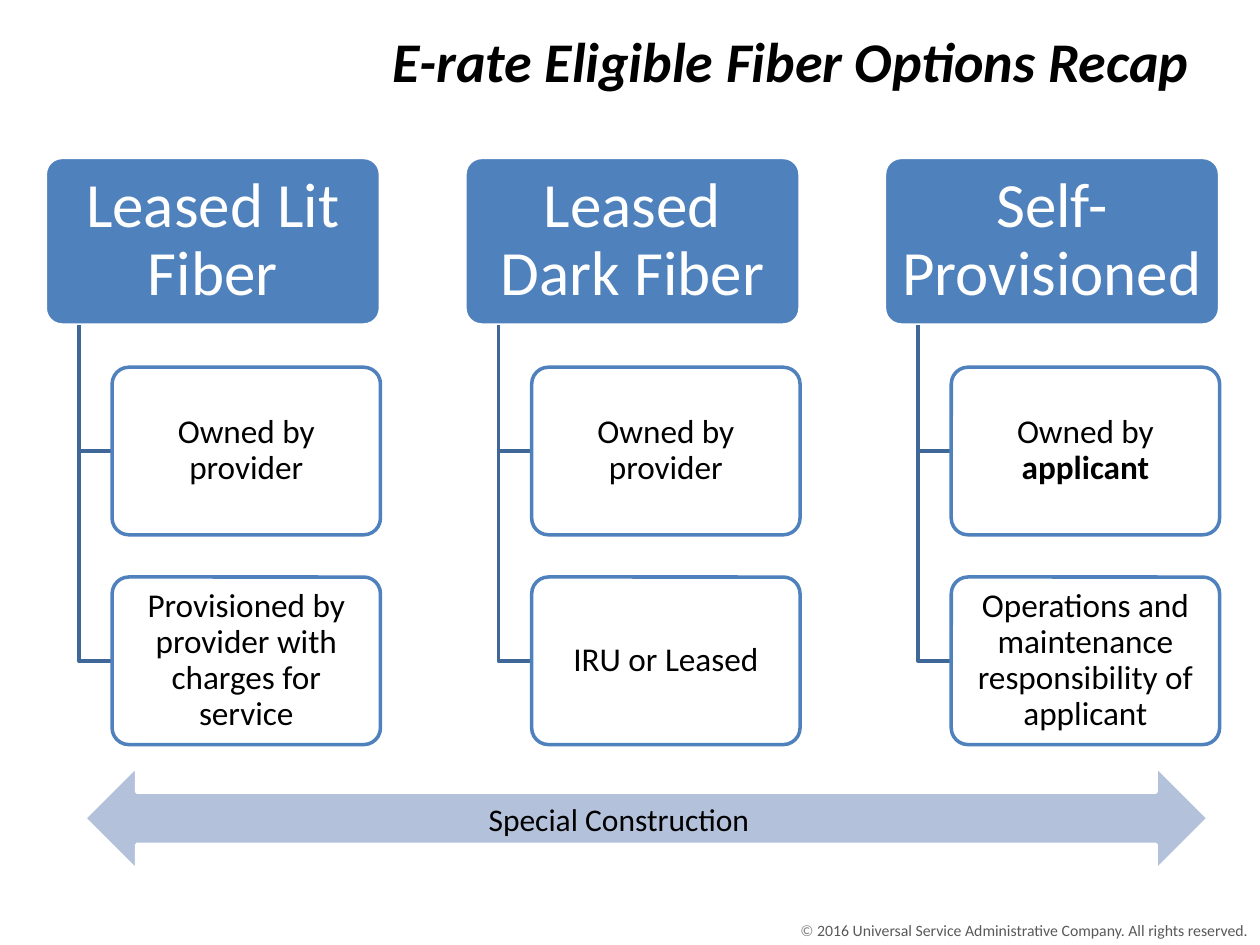
from dataclasses import dataclass

from lxml import etree
from pptx import Presentation
from pptx.dml.color import RGBColor
from pptx.enum.shapes import MSO_SHAPE
from pptx.enum.text import MSO_ANCHOR, PP_ALIGN
from pptx.oxml.ns import qn
from pptx.util import Inches, Pt

ROUNDED = MSO_SHAPE.ROUNDED_RECTANGLE
ARROW = MSO_SHAPE.LEFT_RIGHT_ARROW
MIDDLE = MSO_ANCHOR.MIDDLE
LEFT, CENTER, RIGHT = PP_ALIGN.LEFT, PP_ALIGN.CENTER, PP_ALIGN.RIGHT

FONT = "Calibri"
BLACK = RGBColor(0x00, 0x00, 0x00)
WHITE = RGBColor(0xFF, 0xFF, 0xFF)
BLUE = RGBColor(0x4F, 0x81, 0xBD)
DARK_BLUE = RGBColor(0x3F, 0x67, 0x97)
PALE_BLUE = RGBColor(0xB3, 0xC1, 0xDB)
GREY = RGBColor(0x80, 0x80, 0x80)
DARK_GREY = RGBColor(0x59, 0x59, 0x59)

FIRST_LEFT, COLUMN_STEP = 0.36, 3.33
HEAD_TOP, HEAD_WIDTH, BOX_HEIGHT = 1.25, 2.66, 1.33
ROW_STEP = 1.665
INDENT, TRUNK = 0.53, 0.265
LINE_WIDTH = Pt(2)


@dataclass(frozen=True)
class Run:
    text: str
    size: float
    color: RGBColor = BLACK
    bold: bool = False
    italic: bool = False


@dataclass(frozen=True)
class Option:
    heading: str
    details: tuple[tuple[Run, ...], ...]


def detail(text: str, bold: bool = False) -> Run:
    return Run(text, 19, bold=bold)


OPTIONS = (
    Option("Leased Lit Fiber", (
        (detail("Owned by provider"),),
        (detail("Provisioned by provider with charges for service"),),
    )),
    Option("Leased Dark Fiber", (
        (detail("Owned by provider"),),
        (detail("IRU or Leased"),),
    )),
    Option("Self-Provisioned", (
        (detail("Owned by "), detail("applicant", bold=True)),
        (detail("Operations and maintenance responsibility of applicant"),),
    )),
)


def write(tf, runs: tuple[Run, ...], align, insets: tuple[float, float]) -> None:
    """Fill a text frame with one paragraph; insets are horizontal, vertical."""
    tf.word_wrap = True
    tf.margin_left = tf.margin_right = Inches(insets[0])
    tf.margin_top = tf.margin_bottom = Inches(insets[1])
    p = tf.paragraphs[0]
    p.alignment = align
    for run in runs:
        r = p.add_run()
        r.text = run.text
        r.font.name = FONT
        r.font.size = Pt(run.size)
        r.font.color.rgb = run.color
        r.font.bold = run.bold
        r.font.italic = run.italic


def add_text(slide, left: float, top: float, width: float, height: float,
             runs: tuple[Run, ...], align=LEFT,
             insets: tuple[float, float] = (0.1, 0.05)) -> None:
    box = slide.shapes.add_textbox(
        Inches(left), Inches(top), Inches(width), Inches(height))
    write(box.text_frame, runs, align, insets)


def add_filled(slide, kind, left: float, top: float, width: float,
               height: float, fill: RGBColor, line: RGBColor):
    sp = slide.shapes.add_shape(
        kind, Inches(left), Inches(top), Inches(width), Inches(height))
    sp.shadow.inherit = False
    sp.fill.solid()
    sp.fill.fore_color.rgb = fill
    sp.line.color.rgb = line
    sp.line.width = LINE_WIDTH
    return sp


def add_box(slide, left: float, top: float, width: float, fill: RGBColor,
            line: RGBColor, runs: tuple[Run, ...],
            insets: tuple[float, float]):
    sp = add_filled(slide, ROUNDED, left, top, width, BOX_HEIGHT, fill, line)
    sp.adjustments[0] = 0.1
    tf = sp.text_frame
    tf.vertical_anchor = MIDDLE
    write(tf, runs, CENTER, insets)
    tf.paragraphs[0].line_spacing = 0.9
    return sp


def set_opacity(sp, percent: int) -> None:
    color = sp.fill._xPr.find(qn("a:solidFill"))[0]
    etree.SubElement(color, qn("a:alpha")).set("val", str(percent * 1000))


def add_branch(slide, x: float, top: float, end_x: float, end_y: float) -> None:
    """Draw the elbow from a heading down and across to a detail box."""
    builder = slide.shapes.build_freeform(Inches(x), Inches(top), scale=1.0)
    builder.add_line_segments(
        [(Inches(x), Inches(end_y)), (Inches(end_x), Inches(end_y))],
        close=False)
    sp = builder.convert_to_shape()
    sp.shadow.inherit = False
    sp.fill.background()
    sp.line.color.rgb = DARK_BLUE
    sp.line.width = LINE_WIDTH


def add_option(slide, left: float, option: Option) -> None:
    add_box(slide, left, HEAD_TOP, HEAD_WIDTH, BLUE, WHITE,
            (Run(option.heading, 36, WHITE),), (0.07, 0.05))
    box_left = left + INDENT
    for row, runs in enumerate(option.details, start=1):
        top = HEAD_TOP + row * ROW_STEP
        add_branch(slide, left + TRUNK, HEAD_TOP + BOX_HEIGHT,
                   box_left, top + BOX_HEIGHT / 2)
        sp = add_box(slide, box_left, top, HEAD_WIDTH - INDENT, WHITE, BLUE,
                     runs, (0.04, 0.03))
        set_opacity(sp, 90)


def main() -> None:
    prs = Presentation()
    prs.slide_width, prs.slide_height = Inches(10), Inches(7.5)
    slide = prs.slides.add_slide(prs.slide_layouts[6])

    add_text(slide, 1.04, 7.26, 8.96, 0.25, (
        Run("© ", 9, GREY),
        Run("2016 Universal Service Administrative Company. "
            "All rights reserved.", 9, DARK_GREY),
    ), RIGHT)
    for column, option in enumerate(OPTIONS):
        add_option(slide, FIRST_LEFT + column * COLUMN_STEP, option)
    add_filled(slide, ARROW, 0.67, 6.08, 8.92, 0.83, PALE_BLUE, WHITE)
    add_text(slide, 3.78, 6.3, 3.1, 0.4, (Run("Special Construction", 18),))
    add_text(slide, 2.74, 0.16, 6.75, 0.64, (
        Run("E-rate Eligible Fiber Options Recap", 32, bold=True, italic=True),
    ), RIGHT, (0.05, 0.05))

    prs.save("out.pptx")


if __name__ == "__main__":
    main()
